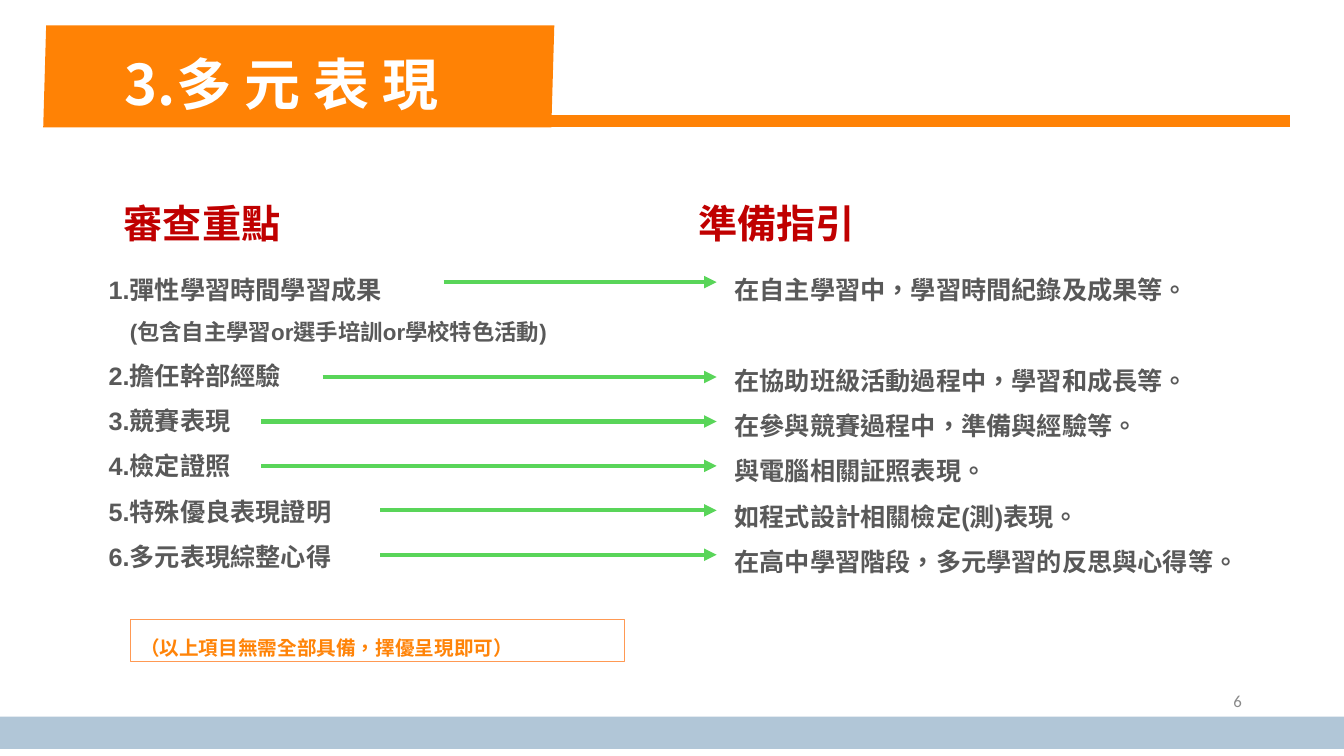
from lxml.etree import SubElement
from pptx import Presentation
from pptx.dml.color import RGBColor
from pptx.enum.lang import MSO_LANGUAGE_ID as Language
from pptx.enum.shapes import MSO_CONNECTOR as Connector, MSO_SHAPE as Shape
from pptx.enum.text import MSO_ANCHOR as Anchor, MSO_AUTO_SIZE as AutoSize, PP_ALIGN as Align
from pptx.oxml.ns import qn
from pptx.util import Cm, Pt

ORANGE = RGBColor(0xFF, 0x82, 0x05)
NOTE_TEXT = RGBColor(0xFF, 0x84, 0x09)
NOTE_LINE = RGBColor(0xFF, 0x99, 0x53)
GREEN = RGBColor(0x59, 0xD5, 0x59)
RED = RGBColor(0xC0, 0x00, 0x00)
GRAY = RGBColor(0x59, 0x59, 0x59)
NUMBER_GRAY = RGBColor(0x89, 0x89, 0x89)
BLUE = RGBColor(0xB1, 0xC6, 0xD7)
WHITE = RGBColor(0xFF, 0xFF, 0xFF)

TITLE = {"name": "Noto Sans CJK SC", "size": Pt(40), "bold": True}
HEADING = {"name": "Arial", "size": Pt(28), "bold": True}
ITEM = {"name": "Arial", "size": Pt(18), "bold": True}
DETAIL = {**ITEM, "size": Pt(16)}
NOTE = {**ITEM, "size": Pt(14)}
NUMBER = {"name": "Calibri", "size": Pt(12), "bold": False}

FRAME = {"word_wrap": True, "auto_size": AutoSize.NONE, "vertical_anchor": Anchor.TOP,
         "margin_left": Cm(0.25), "margin_right": Cm(0.25),
         "margin_top": Cm(0.13), "margin_bottom": Cm(0.13)}
TITLE_FRAME = {"margin_left": Cm(0.76), "margin_right": 0,
               "margin_top": Cm(0.33), "margin_bottom": 0}
LEFT = {"alignment": Align.LEFT, "line_spacing": 1.0, "space_before": Pt(0)}
LIST = {"alignment": Align.JUSTIFY, "line_spacing": 1.5, "space_before": Pt(0)}
AFTER_GAP = {**LIST, "space_before": Pt(32.4)}

FOCUS_LINES = [
    ("1.彈性學習時間學習成果", ITEM),
    ("(包含自主學習or選手培訓or學校特色活動)", DETAIL),
    ("2.擔任幹部經驗", ITEM),
    ("3.競賽表現", ITEM),
    ("4.檢定證照", ITEM),
    ("5.特殊優良表現證明", ITEM),
    ("6.多元表現綜整心得", ITEM),
]
GUIDE_LINES = [
    "在自主學習中，學習時間紀錄及成果等。",
    "在協助班級活動過程中，學習和成⾧等。",
    "在參與競賽過程中，準備與經驗等。",
    "與電腦相關証照表現。",
    "如程式設計相關檢定(測)表現。",
    "在高中學習階段，多元學習的反思與心得等。",
]
ARROW_STARTS = [11.18, 8.13, 6.58, 6.58, 9.58, 9.58]
ARROW_END = 18.06
FIRST_ARROW_TOP = 7.11
SECOND_ARROW_TOP = 9.5
ARROW_STEP = 1.12


def apply(target, values):
    for name, value in values.items():
        setattr(target, name, value)


def place(box, left, top, width, height):
    apply(box, {"left": Cm(left), "top": Cm(top), "width": Cm(width), "height": Cm(height)})


def write(box, lines, color, frame=FRAME):
    apply(box.text_frame, frame)
    for index, (text, font, layout, indent) in enumerate(lines):
        para = box.text_frame.paragraphs[0] if index == 0 else box.text_frame.add_paragraph()
        apply(para, layout)
        properties = para._p.get_or_add_pPr()
        properties.set("marL", str(Cm(indent)))
        properties.set("indent", "0")
        SubElement(properties, qn("a:buNone"))
        span = para.add_run()
        span.text = text
        apply(span.font, {**font, "language_id": Language.TRADITIONAL_CHINESE})
        span.font.color.rgb = color


def add_block(page, preset, at, fill):
    block = page.shapes.add_shape(preset, *map(Cm, at))
    block.shadow.inherit = False
    block.fill.solid()
    block.fill.fore_color.rgb = fill
    block.line.fill.background()
    return block


def add_arrow(page, start, top):
    arrow = page.shapes.add_connector(Connector.STRAIGHT, Cm(start), Cm(top), Cm(ARROW_END), Cm(top))
    arrow.line.color.rgb = GREEN
    arrow.line.width = Pt(3)
    SubElement(arrow.line._get_or_add_ln(), qn("a:tailEnd"), type="triangle")
    SubElement(arrow._element.spPr, qn("a:effectLst"))


def add_banner(page):
    add_block(page, Shape.RECTANGLE, (10.77, 2.9, 21.74, 0.3), ORANGE)
    tab = add_block(page, Shape.PARALLELOGRAM, (1.09, 0.64, 12.88, 2.57), ORANGE)
    tab.adjustments[0] = 0.029
    title = page.shapes.title
    place(title, 2.39, 0.91, 10.31, 2.06)
    write(title, [("3.多 元 表 現", TITLE, LEFT, 0)], WHITE, {**FRAME, **TITLE_FRAME})
    tab._element.addnext(title._element)


def add_columns(page):
    focus_heading, focus_list, guide_heading, guide_list = list(page.placeholders)[1:]
    for heading, text, left in ((focus_heading, "審查重點", 2.87), (guide_heading, "準備指引", 17.35)):
        place(heading, left, 4.9, 4.93, 1.45)
        write(heading, [(text, HEADING, LEFT, 0)], RED)
    place(focus_list, 2.49, 6.4, 14.02, 11.68)
    write(focus_list, [(text, font, LIST, 0.53 if font is DETAIL else 0)
                       for text, font in FOCUS_LINES], GRAY)
    place(guide_list, 18.26, 6.4, 14.55, 9.37)
    write(guide_list, [(text, ITEM, AFTER_GAP if index == 1 else LIST, 0)
                       for index, text in enumerate(GUIDE_LINES)], GRAY)


def add_arrows(page):
    tops = [FIRST_ARROW_TOP] + [SECOND_ARROW_TOP + ARROW_STEP * row for row in range(5)]
    for start, top in zip(ARROW_STARTS, tops):
        add_arrow(page, start, top)


def add_note(page):
    note = add_block(page, Shape.RECTANGLE, (3.28, 15.6, 12.45, 1.07), WHITE)
    note.line.color.rgb = NOTE_LINE
    note.line.width = Pt(0.75)
    write(note, [("（以上項目無需全部具備，擇優呈現即可）", NOTE, {**LIST, "alignment": Align.LEFT}, 0)], NOTE_TEXT)


def add_footer(page):
    number = page.shapes.add_textbox(Cm(23.93), Cm(17.15), Cm(7.62), Cm(1.02))
    write(number, [("6", NUMBER, {"alignment": Align.RIGHT}, 0)], NUMBER_GRAY,
          {**FRAME, "vertical_anchor": Anchor.MIDDLE})
    add_block(page, Shape.RECTANGLE, (0, 18.06, 33.87, 0.81), BLUE)


def main():
    deck = Presentation()
    apply(deck, {"slide_width": Cm(33.87), "slide_height": Cm(19.05)})
    page = deck.slides.add_slide(deck.slide_layouts.get_by_name("Comparison"))
    add_banner(page)
    add_columns(page)
    add_arrows(page)
    add_note(page)
    add_footer(page)
    deck.save("out.pptx")


if __name__ == "__main__":
    main()
